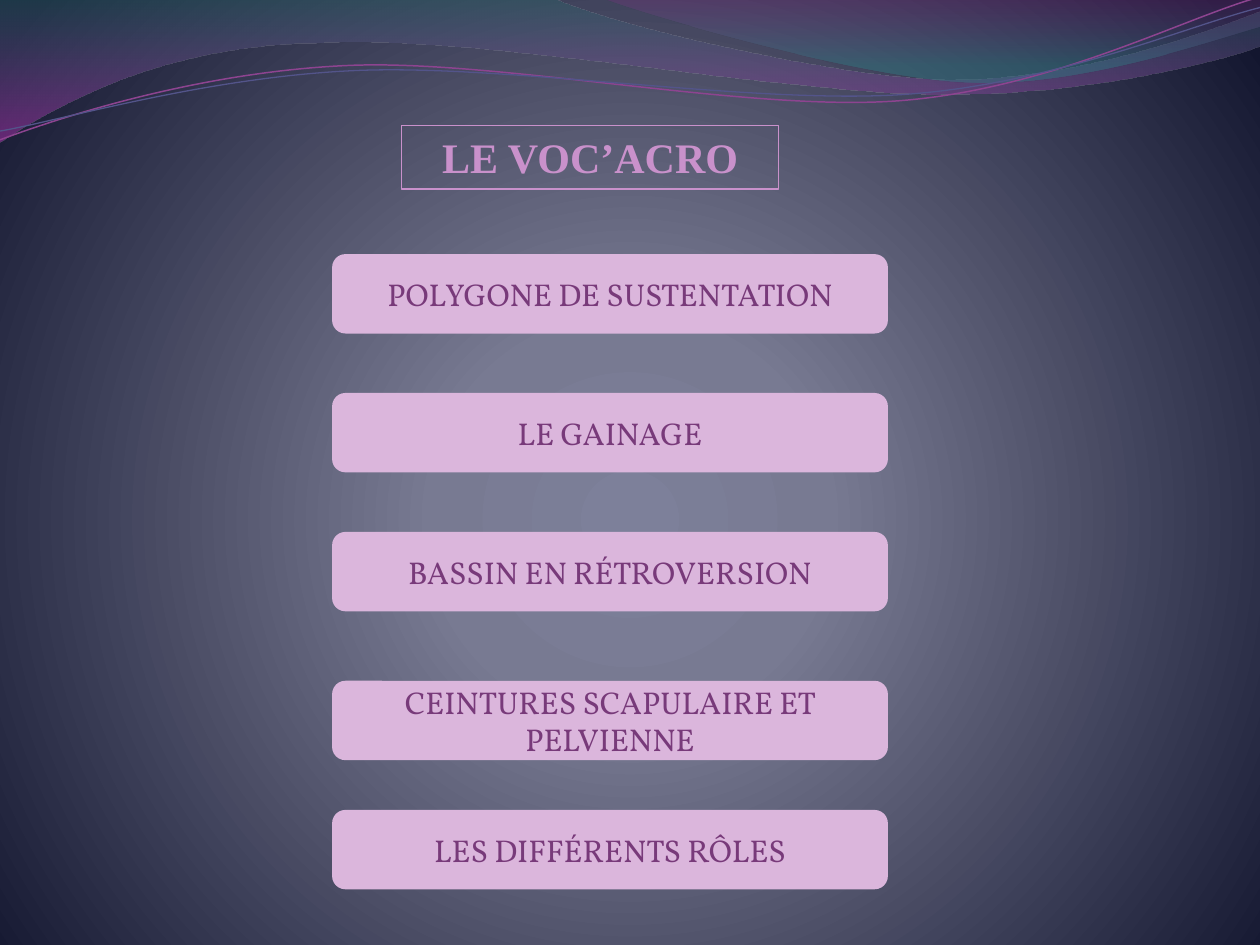
import math

from pptx import Presentation
from pptx import util as u
from pptx.dml.color import RGBColor
from pptx.enum import shapes, text
from pptx.oxml import parse_xml
from pptx.oxml.ns import nsdecls, qn

Pt = u.Pt

LILAC = RGBColor(0xC9, 0x91, 0xCB)
PALE_LILAC = RGBColor(0xDB, 0xB6, 0xDC)
PLUM = RGBColor(0x78, 0x3A, 0x7A)
ORCHID = RGBColor(0x8D, 0x44, 0x90)
INDIGO = RGBColor(0x53, 0x54, 0x8A)
TEAL = RGBColor(0x2D, 0x63, 0x68)
MAGENTA = RGBColor(0xA5, 0x30, 0xA9)
PURPLE = RGBColor(0x7F, 0x2F, 0x82)
SEA = RGBColor(0x2F, 0x7B, 0x82)
GLOW = RGBColor(0x7D, 0x80, 0x9A)
SLATE = RGBColor(0x78, 0x7A, 0x92)
NIGHT = RGBColor(0x13, 0x16, 0x2F)

TILT = 357.3

BAND = [[(0, -0.7)], [(316.8, -0.7)], [(342.7, 12.2), (478.1, 45.4), (545.8, 45.4)],
        [(614.2, 45.4), (689.8, 18.7), (720, 6.5)], [(720.7, 25.9)],
        [(707.8, 31.7), (626.4, 54.7), (537.1, 54)],
        [(447.8, 54), (275, 20.2), (185, 24.5)],
        [(92.9, 25.2), (33.1, 59.8), (-0.7, 81.4)]]
SASH = [[(344.9, -0.7)], [(366.5, 7.9), (491, 44.6), (553.7, 46.8)],
        [(616.3, 49.7), (691.9, 23), (720, 15.1)], [(720, 0)]]
UPPER_STRAND = [[(0, 79.9)], [(34.6, 67), (113.8, 41), (199.4, 37.4)],
                [(284.4, 33.8), (427, 64.1), (513.4, 57.6)],
                [(599.8, 51.1), (675.4, 10.8), (718.6, -1.4)]]
LOWER_STRAND = [[(0, 74.9)], [(33.8, 69.1), (118.1, 43.9), (203.8, 40.3)],
                [(290.2, 36.7), (429.8, 59.8), (516.2, 54)],
                [(601.9, 48.2), (677.5, 15.1), (720, 4.3)]]

TERMS = [("POLYGONE DE SUSTENTATION", 0), ("LE GAINAGE", 79.35),
         ("BASSIN EN RÉTROVERSION", 158.75),
         ("CEINTURES SCAPULAIRE ET PELVIENNE", 243.8),
         ("LES DIFFÉRENTS RÔLES", 317.6)]


def gradient(stops, direction):
    """Return a gradient fill from (position, colour, opacity) stops."""
    marks = ""
    for position, colour, opacity in stops:
        alpha = f'<a:alpha val="{opacity * 1000}"/>' if opacity < 100 else ""
        marks += (f'<a:gs pos="{position * 1000}">'
                  f'<a:srgbClr val="{colour}">{alpha}</a:srgbClr></a:gs>')
    return parse_xml(f'<a:gradFill {nsdecls("a")} rotWithShape="1">'
                     f'<a:gsLst>{marks}</a:gsLst>{direction}</a:gradFill>')


def paint_background(slide):
    """Give the slide its radial glow."""
    slide.background.fill.solid()
    solid = slide.background._cSld.find(".//" + qn("a:solidFill"))
    glow = gradient(
        [(0, GLOW, 100), (25, SLATE, 100), (100, NIGHT, 100)],
        '<a:path path="circle"><a:fillToRect l="10000" t="110000" '
        'r="10000" b="100000"/></a:path>')
    solid.getparent().replace(solid, glow)


def turn(outline, centre, degrees):
    """Rotate an outline clockwise about a centre."""
    cx, cy = centre
    cos, sin = math.cos(math.radians(degrees)), math.sin(math.radians(degrees))
    return [[(cx + (x - cx) * cos - (y - cy) * sin,
              cy + (x - cx) * sin + (y - cy) * cos) for x, y in segment]
            for segment in outline]


def add_outline(slide, left, top, outline, close):
    """Draw an unfilled freeform of straight and cubic segments."""
    segments = [[(Pt(left + x), Pt(top + y)) for x, y in segment]
                for segment in outline]
    ends = [segment[-1] for segment in segments]
    builder = slide.shapes.build_freeform(*ends[0], scale=1.0)
    builder.add_line_segments(ends[1:], close=close)
    wave = builder.convert_to_shape()
    sides = list(wave._element.iter(qn("a:lnTo")))
    for side, segment in zip(sides, segments[1:]):
        if len(segment) == 3:
            marks = "".join(f'<a:pt x="{x - wave.left}" y="{y - wave.top}"/>'
                            for x, y in segment)
            curve = parse_xml(f'<a:cubicBezTo {nsdecls("a")}>{marks}</a:cubicBezTo>')
            side.getparent().replace(side, curve)
    wave.shadow.inherit = False
    wave.fill.background()
    wave.line.fill.background()
    return wave


def add_waves(slide, left, top):
    """Draw the translucent waves and thin strands of the header."""
    for outline, stops in (
            (BAND, [(0, TEAL, 45), (100, MAGENTA, 55)]),
            (SASH, [(0, PURPLE, 30), (80, SEA, 45)])):
        wave = add_outline(slide, left, top, outline, True)
        empty = wave._element.spPr.find(qn("a:noFill"))
        empty.getparent().replace(
            empty, gradient(stops, '<a:lin ang="5400000" scaled="0"/>'))
    for outline, centre, colour, width in (
            (UPPER_STRAND, (359.3, 41.4), ORCHID, 0.85),
            (LOWER_STRAND, (359.6, 42.5), INDIGO, 0.75)):
        strand = add_outline(slide, left, top, turn(outline, centre, -TILT), False)
        strand.rotation = TILT
        strand.line.color.rgb = colour
        strand.line.width = Pt(width)


def add_label(slide, kind, box, wording, font_name, size, colour):
    """Add a shape with centred wording."""
    label = slide.shapes.add_shape(kind, *(Pt(length) for length in box))
    label.shadow.inherit = False
    frame = label.text_frame
    frame.word_wrap = True
    frame.text = wording
    paragraph = frame.paragraphs[0]
    paragraph.alignment = text.PP_ALIGN.CENTER
    font = paragraph.runs[0].font
    font.name, font.size, font.color.rgb = font_name, Pt(size), colour
    return label


def add_title(slide, left, top, width, height):
    """Add the framed heading."""
    title = add_label(slide, shapes.MSO_SHAPE.RECTANGLE, (left, top, width, height),
                      "LE VOC’ACRO", "Times New Roman", 24, LILAC)
    title.fill.background()
    title.line.color.rgb = LILAC
    title.line.width = Pt(0.75)
    title.text_frame.vertical_anchor = text.MSO_ANCHOR.TOP
    title.text_frame.auto_size = text.MSO_AUTO_SIZE.SHAPE_TO_FIT_TEXT
    title.text_frame.paragraphs[0].runs[0].font.bold = True


def add_terms(slide, left, top, width, height):
    """Stack the vocabulary buttons, each of the given height."""
    for wording, offset in TERMS:
        term = add_label(slide, shapes.MSO_SHAPE.ROUNDED_RECTANGLE,
                         (left, top + offset, width, height),
                         wording, "Vollkorn", 18, PLUM)
        term.fill.solid()
        term.fill.fore_color.rgb = PALE_LILAC
        term.line.fill.background()
        term.text_frame.vertical_anchor = text.MSO_ANCHOR.MIDDLE


def main():
    """Build and save the slide."""
    deck = Presentation()
    deck.slide_width, deck.slide_height = Pt(720), Pt(540)
    slide = deck.slides.add_slide(deck.slide_layouts[6])
    paint_background(slide)
    add_waves(slide, 0, 0)
    add_title(slide, 229.5, 71.7, 215.5, 36.35)
    add_terms(slide, 189.8, 145.25, 317.6, 45.35)
    deck.save("out.pptx")


if __name__ == "__main__":
    main()
